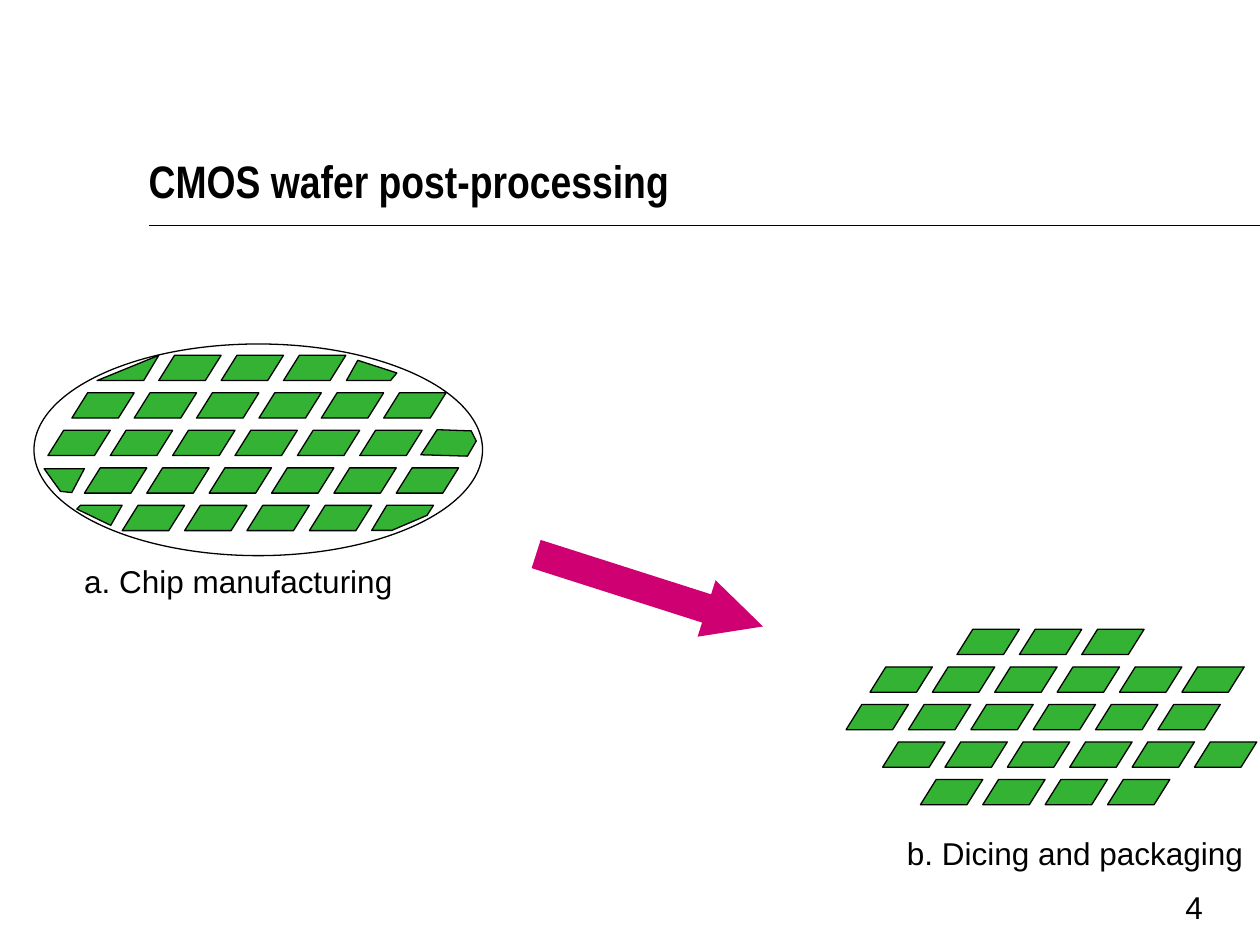
import pptx
import pptx.util
import pptx.dml.color
import pptx.enum.shapes
import pptx.enum.text
import pptx.oxml.ns
import lxml.etree

SLIDE_WIDTH = pptx.util.Inches(10)
SLIDE_HEIGHT = pptx.util.Inches(7.5)
SHAPES = pptx.enum.shapes.MSO_SHAPE
ANCHORS = pptx.enum.text.MSO_ANCHOR

BLACK = "000000"
CHIP_GREEN = "34B233"
ARROW_PINK = "CF0072"

# All positions and sizes are percentages of the slide's width and height.
CHIP_SIZE = (4.95, 2.67)
COLUMN_STEP, ROW_STEP = 4.95, 3.97
CHIP_ROWS = [(12.6, 3), (5.7, 6), (3.8, 6), (6.7, 6), (9.7, 4)]  # left, count
FIRST_ROW_TOP = 37.6
DICED_SHIFT = (63.35, 29)

EDGE_CHIPS = [
    [(28.4, 38.13), (27.5, 40.27), (31, 40.27), (31.5, 39.47)],
    [(8.8, 55.6), (9.7, 53.47), (6.4, 53.47), (6.1, 53.87)],
    [(30.7, 53.47), (29.5, 56.13), (31.1, 56.13), (33.9, 54.53), (34.4, 53.47)],
    [(3.5, 49.6), (6.7, 49.6), (5.7, 52.13), (4.8, 52)],
    [(7.7, 40.27), (11.4, 40.27), (12.6, 37.6)],
    [(34.7, 45.47), (33.4, 48.13), (37.1, 48.27), (37.8, 46.67), (37.4, 45.6)],
]


def color(hex_text):
    return pptx.dml.color.RGBColor.from_string(hex_text)


def across(percent):
    return round(SLIDE_WIDTH * percent / 100)


def down(percent):
    return round(SLIDE_HEIGHT * percent / 100)


def box(left, top, width, height):
    return across(left), down(top), across(width), down(height)


def style(shape, fill=None, line=None):
    shape.shadow.inherit = False
    if fill:
        shape.fill.solid()
        shape.fill.fore_color.rgb = color(fill)
    else:
        shape.fill.background()
    if line:
        shape.line.color.rgb = color(line)
        shape.line.width = pptx.util.Pt(0.75)
    else:
        shape.line.fill.background()


def add_preset(slide, kind, place, adjustments=(), fill=None, line=None):
    shape = slide.shapes.add_shape(kind, *box(*place))
    for index, value in enumerate(adjustments):
        shape.adjustments[index] = value
    style(shape, fill, line)
    return shape


def add_text(slide, place, text, size=18, font="Arial", bold=False, wrap=False):
    text_box = slide.shapes.add_textbox(*box(*place))
    frame = text_box.text_frame
    frame.word_wrap = wrap
    run = frame.paragraphs[0].add_run()
    run.text = text
    run.font.size = pptx.util.Pt(size)
    run.font.name = font
    run.font.bold = bold
    run.font.color.rgb = color(BLACK)
    return frame


def add_title(slide, text):
    frame = add_text(slide, (11.8, 5.33, 85.4, 16.67), text, 26, "Arial Narrow", True, True)
    frame.vertical_anchor = ANCHORS.BOTTOM
    frame.margin_left = frame.margin_bottom = 0


def add_rule(slide, left, right, top):
    rule = slide.shapes.add_connector(
        pptx.enum.shapes.MSO_CONNECTOR.STRAIGHT,
        across(left), down(top), across(right), down(top))
    rule.line.color.rgb = color(BLACK)
    rule.line.width = pptx.util.Pt(1)
    properties = rule._element.spPr
    lxml.etree.SubElement(properties, pptx.oxml.ns.qn("a:effectLst"))


def add_chip_rows(slide, shift=(0, 0)):
    """Draw the rows of whole chips, moved by a shift in percent."""
    for row, (left, count) in enumerate(CHIP_ROWS):
        top = FIRST_ROW_TOP + row * ROW_STEP + shift[1]
        for column in range(count):
            place = (left + column * COLUMN_STEP + shift[0], top, *CHIP_SIZE)
            add_preset(slide, SHAPES.PARALLELOGRAM, place, [0.625], CHIP_GREEN, BLACK)


def add_edge_chip(slide, corners):
    """Draw a chip that is cut off by the wafer's edge."""
    points = [(across(x), down(y)) for x, y in corners]
    builder = slide.shapes.build_freeform(*points[0])
    builder.add_line_segments(points[1:], close=True)
    style(builder.convert_to_shape(), CHIP_GREEN, BLACK)


def main():
    presentation = pptx.Presentation()
    presentation.slide_width = SLIDE_WIDTH
    presentation.slide_height = SLIDE_HEIGHT
    slide = presentation.slides.add_slide(presentation.slide_layouts[6])

    add_rule(slide, 11.8, 100, 23.87)
    add_text(slide, (93.1, 93.33, 4.1, 6.93), "4", wrap=True)
    add_title(slide, "CMOS wafer post-processing")

    add_preset(slide, SHAPES.OVAL, (2.7, 36.4, 35.6, 22.4), line=BLACK)
    add_chip_rows(slide)
    for corners in EDGE_CHIPS:
        add_edge_chip(slide, corners)
    add_text(slide, (5.7, 58.8, 26.5, 5.33), "a. Chip manufacturing")

    add_chip_rows(slide, DICED_SHIFT)
    add_text(slide, (71, 87.6, 28.7, 5.33), "b. Dicing and packaging")

    arrow = add_preset(slide, SHAPES.RIGHT_ARROW, (42.1, 59.33, 18.9, 6.27),
                       [0.5, 1], ARROW_PINK)
    arrow.rotation = 17.7

    presentation.save("out.pptx")


if __name__ == "__main__":
    main()
